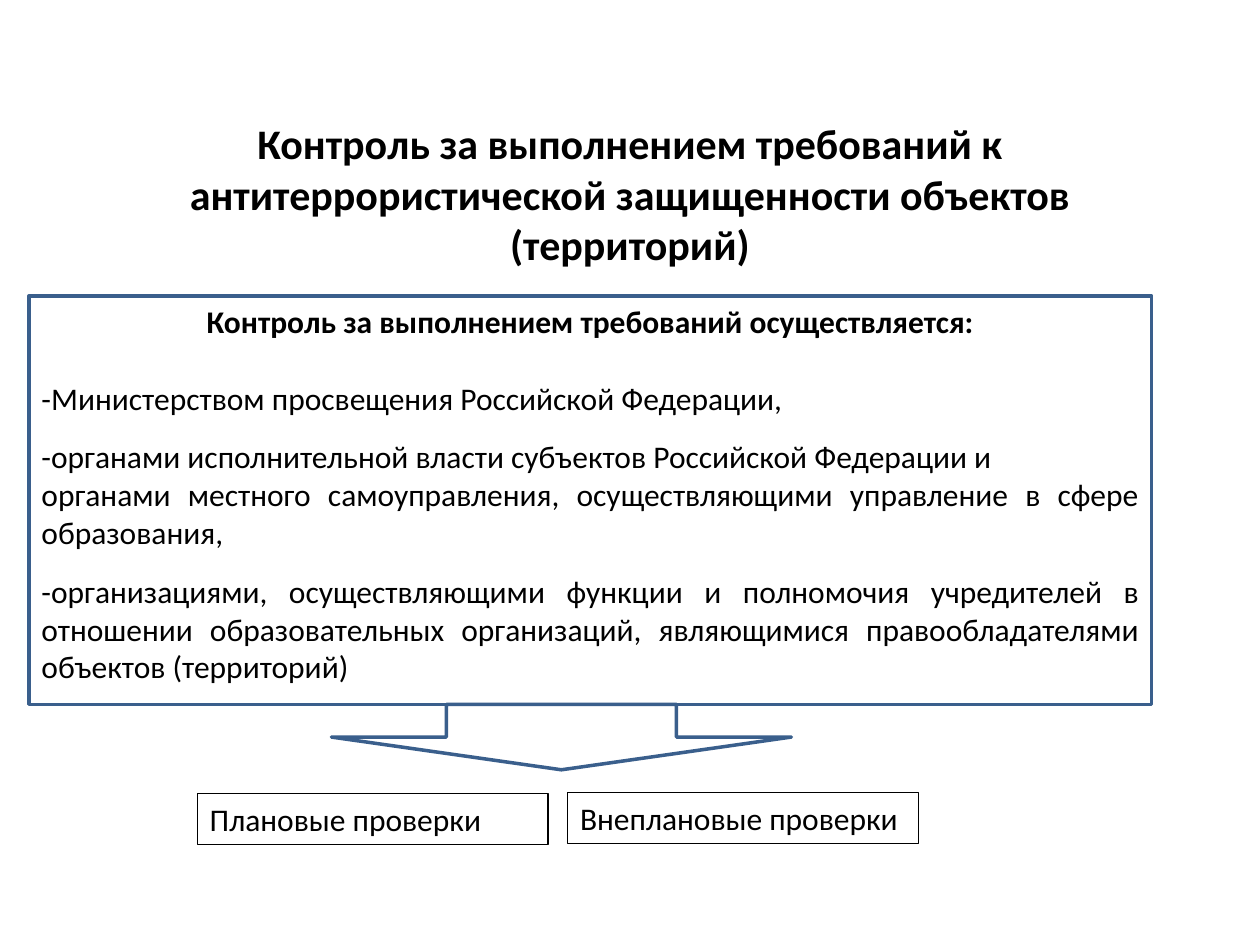
from dataclasses import dataclass

from pptx import Presentation
from pptx.dml.color import RGBColor
from pptx.enum.shapes import MSO_SHAPE as Shape
from pptx.enum.text import MSO_ANCHOR as Anchor, PP_ALIGN as Align
from pptx.util import Pt

FONT = "Calibri"
BLACK = "000000"
BLUE = "3A5F8C"


@dataclass
class Box:
    left: float
    top: float
    width: float
    height: float

    def lengths(self) -> list:
        return [Pt(v) for v in (self.left, self.top, self.width, self.height)]


@dataclass
class Line:
    text: str
    size: float = 18
    bold: bool = False
    align: Align = Align.JUSTIFY
    before: float = 0


def color(hex_value: str) -> RGBColor:
    return RGBColor.from_string(hex_value)


def write(frame, lines: list[Line], anchor: Anchor = Anchor.TOP) -> None:
    frame.word_wrap = True
    frame.vertical_anchor = anchor
    for index, line in enumerate(lines):
        paragraph = frame.add_paragraph() if index else frame.paragraphs[0]
        paragraph.text = line.text
        paragraph.alignment = line.align
        if line.before:
            paragraph.space_before = Pt(line.before)
        font = paragraph.font
        font.name, font.size, font.bold = FONT, Pt(line.size), line.bold
        font.color.rgb = color(BLACK)


def add_text(slide, box: Box, lines: list[Line], anchor: Anchor = Anchor.TOP) -> None:
    write(slide.shapes.add_textbox(*box.lengths()).text_frame, lines, anchor)


def add_outline(slide, kind: Shape, box: Box, line_color: str, weight: float):
    outline = slide.shapes.add_shape(kind, *box.lengths())
    outline.shadow.inherit = False
    outline.fill.background()
    outline.line.color.rgb = color(line_color)
    outline.line.width = Pt(weight)
    return outline


TITLE_BOX = Box(36, 89.3, 648, 42.5)
TITLE = Line(
    "Контроль за выполнением требований к антитеррористической "
    "защищенности объектов (территорий)",
    size=24, bold=True, align=Align.CENTER,
)

CONTROL_BOX = Box(16.6, 169.2, 641.5, 233.3)
ITEM_GAP = 12
CONTROL = [
    Line("Контроль за выполнением требований осуществляется:",
         bold=True, align=Align.CENTER),
    Line("-Министерством просвещения Российской Федерации,", before=22),
    Line("-органами исполнительной власти субъектов Российской Федерации и",
         before=ITEM_GAP),
    Line("органами местного самоуправления, осуществляющими управление "
         "в сфере образования,"),
    Line("-организациями, осуществляющими функции и полномочия учредителей "
         "в отношении образовательных организаций, являющимися "
         "правообладателями объектов (территорий)", before=ITEM_GAP),
]

ARROW_BOX = Box(189.4, 402.5, 262.8, 37.4)

INSPECTIONS = [
    ("Плановые проверки", Box(112.8, 453.5, 200.4, 29)),
    ("Внеплановые проверки", Box(324.4, 453, 200.4, 29)),
]


def main() -> None:
    deck = Presentation()
    deck.slide_width, deck.slide_height = Pt(720), Pt(540)
    slide = deck.slides.add_slide(deck.slide_layouts[6])

    # Title
    add_text(slide, TITLE_BOX, [TITLE], Anchor.MIDDLE)

    # Controlling bodies in a frame
    add_text(slide, CONTROL_BOX, CONTROL)
    add_outline(slide, Shape.RECTANGLE, CONTROL_BOX, BLUE, 2)

    # Arrow down to the kinds of inspection
    add_outline(slide, Shape.DOWN_ARROW, ARROW_BOX, BLUE, 2)
    for label, box in INSPECTIONS:
        inspection = add_outline(slide, Shape.RECTANGLE, box, BLACK, 0.75)
        write(inspection.text_frame, [Line(label, align=Align.LEFT)])

    deck.save("out.pptx")


if __name__ == "__main__":
    main()
